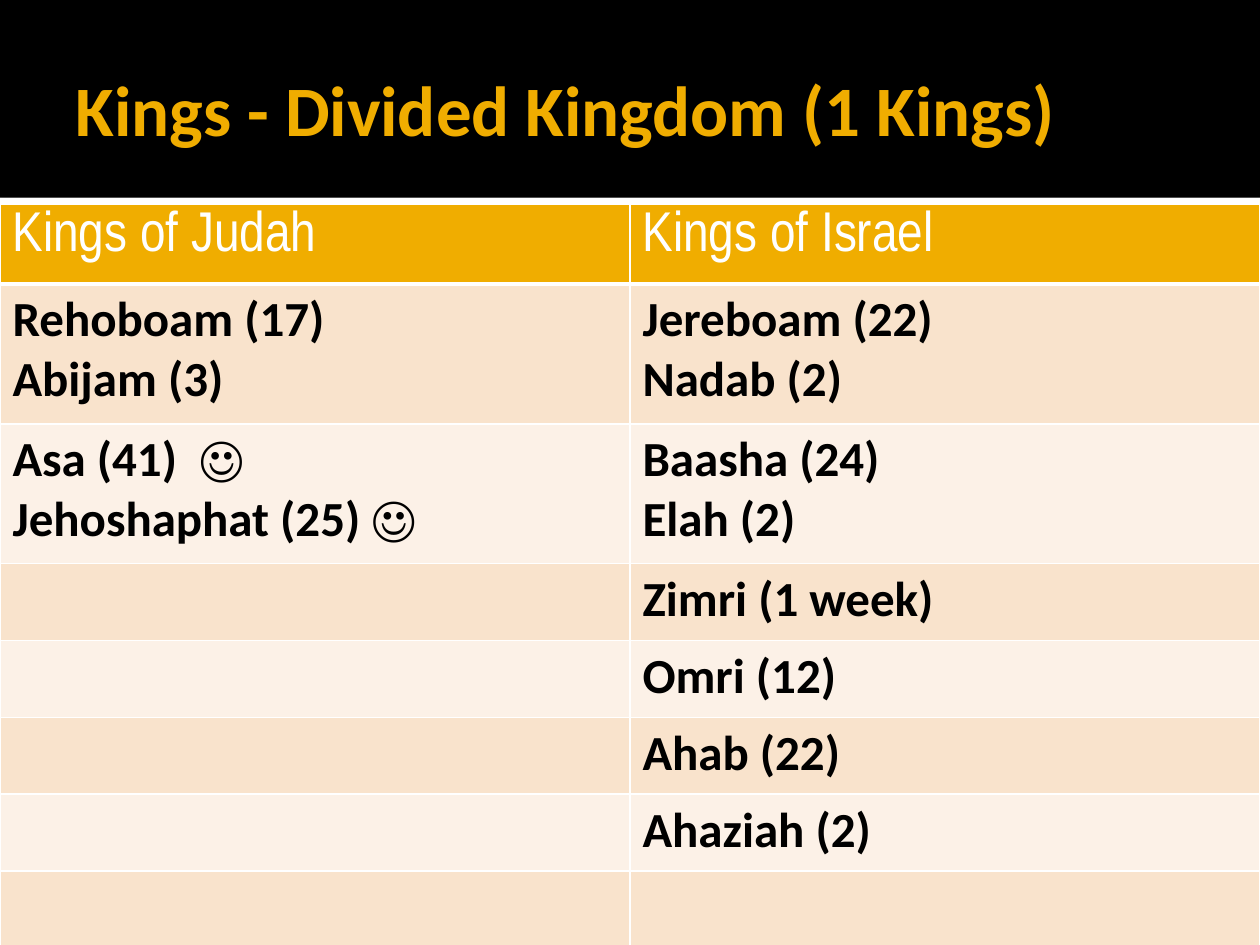
from lxml import etree
from pptx import Presentation
from pptx.dml.color import RGBColor
from pptx.enum.shapes import MSO_SHAPE
from pptx.enum.text import MSO_ANCHOR
from pptx.oxml.ns import qn
from pptx.util import Inches, Pt

RECTANGLE = MSO_SHAPE.RECTANGLE
MIDDLE = MSO_ANCHOR.MIDDLE

BLACK, WHITE, GOLD = "000000", "FFFFFF", "F0AD00"
BANDS = ["F9E3CC", "FCF1E7"]
ROW_HEIGHTS = [0.63, 1.11, 1.11] + [0.61] * 5
KINGS = [
    ("Kings of Judah", "Kings of Israel"),
    ("Rehoboam (17)\nAbijam (3)", "Jereboam (22)\nNadab (2)"),
    ("Asa (41)  ☺\nJehoshaphat (25) ☺", "Baasha (24)\nElah (2)"),
    ("", "Zimri (1 week)"),
    ("", "Omri (12)"),
    ("", "Ahab (22)"),
    ("", "Ahaziah (2)"),
    ("", ""),
]


def rgb(color):
    return RGBColor.from_string(color)


def set_font(p, name, size, color, bold):
    p.font.name = name
    p.font.size = Pt(size)
    p.font.bold = bold
    p.font.color.rgb = rgb(color)


def add_color(parent, color):
    return etree.SubElement(parent, qn("a:srgbClr"), val=color)


def add_band(slide, top, height, color):
    sp = slide.shapes.add_shape(RECTANGLE, 0, Inches(top), Inches(10), Inches(height))
    sp.shadow.inherit = False
    sp.fill.solid()
    sp.fill.fore_color.rgb = rgb(color)
    sp.line.fill.background()
    return sp


def add_shadow(sp):
    effects = sp.element.spPr.find(qn("a:effectLst"))
    shadow = etree.SubElement(effects, qn("a:outerShdw"), blurRad=str(Pt(2.5)),
                              dist=str(Pt(0.8)), dir="5400000")
    etree.SubElement(add_color(shadow, BLACK), qn("a:alpha"), val="60000")


def add_title(slide, text):
    sp = slide.shapes.add_textbox(Inches(0.5), Inches(0.17), Inches(9), Inches(1.37))
    tf = sp.text_frame
    tf.word_wrap = True
    tf.vertical_anchor = MIDDLE
    tf.margin_right = Inches(0.05)
    tf.text = text
    set_font(tf.paragraphs[0], "Calibri", 40.5, GOLD, True)


def set_borders(cell, bottom):
    tc_pr = cell._tc.get_or_add_tcPr()
    for side, width in (("L", 1), ("R", 1), ("T", 1), ("B", bottom)):
        ln = etree.SubElement(tc_pr, qn(f"a:ln{side}"), w=str(Pt(width)))
        add_color(etree.SubElement(ln, qn("a:solidFill")), WHITE)


def fill_cell(cell, text, row):
    header = row == 0
    # Borders go before the fill in the cell properties
    set_borders(cell, 3 if header else 1)
    cell.fill.solid()
    cell.fill.fore_color.rgb = rgb(GOLD if header else BANDS[(row - 1) % 2])
    cell.text = text
    for p in cell.text_frame.paragraphs:
        if header:
            set_font(p, "Arial Narrow", 32, WHITE, False)
        else:
            set_font(p, "Calibri", 28, BLACK, True)


def add_kings_table(slide):
    table = slide.shapes.add_table(len(KINGS), 2, 0, Inches(1.62), Inches(10),
                                   Inches(sum(ROW_HEIGHTS))).table
    for r, (height, names) in enumerate(zip(ROW_HEIGHTS, KINGS)):
        table.rows[r].height = Inches(height)
        for c, text in enumerate(names):
            fill_cell(table.cell(r, c), text, r)


def main():
    prs = Presentation()
    prs.slide_width, prs.slide_height = Inches(10), Inches(7.5)
    slide = prs.slides.add_slide(prs.slide_layouts[6])

    # Title band with a white strip under it
    add_shadow(add_band(slide, 1.57, 0.05, WHITE))
    add_band(slide, 0, 1.57, BLACK)
    add_title(slide, "Kings - Divided Kingdom (1 Kings)")

    # Kings of both kingdoms
    add_kings_table(slide)
    prs.save("out.pptx")


if __name__ == "__main__":
    main()
